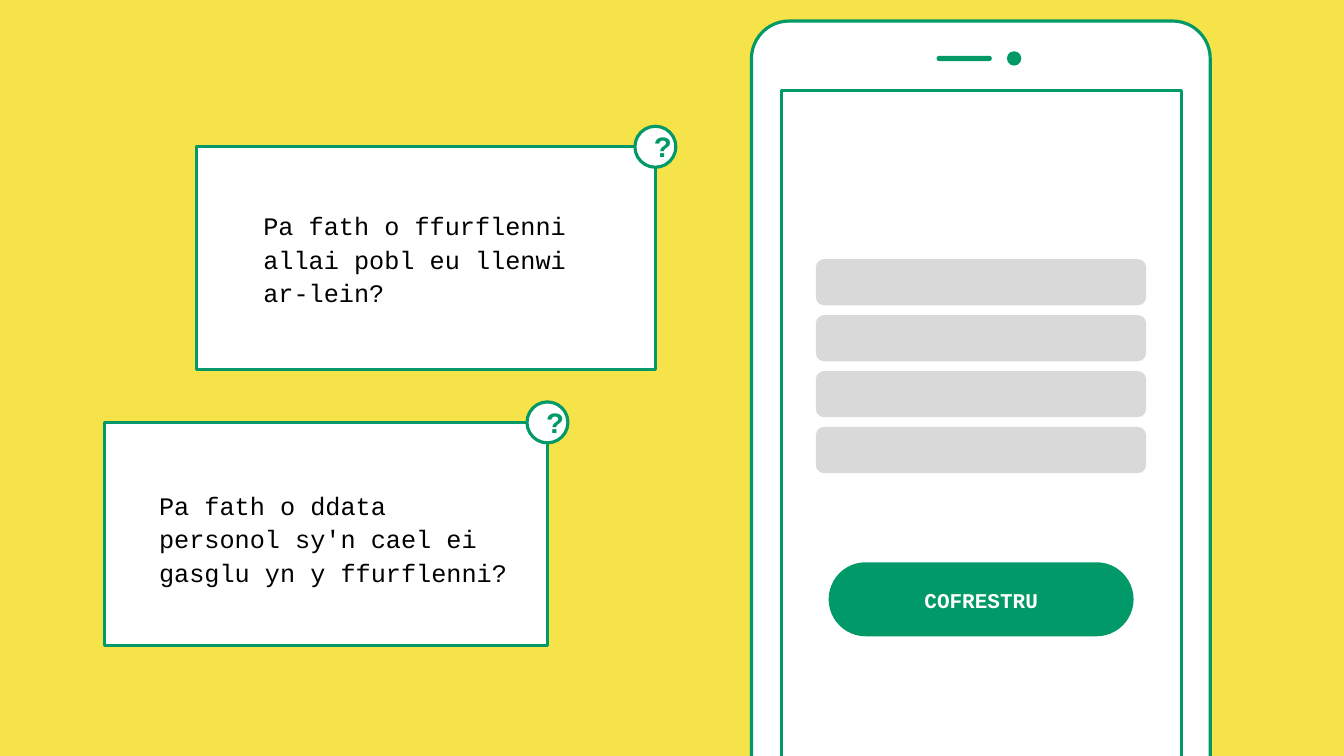
from pptx import Presentation
from pptx.dml.color import RGBColor
from pptx.enum.shapes import MSO_SHAPE
from pptx.enum.text import MSO_ANCHOR, PP_ALIGN
from pptx.util import Pt

COLORS = {
    "yellow": "F6E249",
    "green": "019967",
    "white": "FFFFFF",
    "gray": "D9D9D9",
    "black": "000000",
}
FONT = "Courier New"

prs = Presentation()
prs.slide_width, prs.slide_height = Pt(1280), Pt(720)
slide = prs.slides.add_slide(prs.slide_layouts[6])
slide.background.fill.solid()
slide.background.fill.fore_color.rgb = RGBColor.from_string(COLORS["yellow"])


def add_panel(kind, left, top, width, height, fill, outlined=False, rounding=None):
    """Add a filled shape, with a green outline if asked for."""
    panel = slide.shapes.add_shape(kind, Pt(left), Pt(top), Pt(width), Pt(height))
    panel.shadow.inherit = False
    panel.fill.solid()
    panel.fill.fore_color.rgb = RGBColor.from_string(COLORS[fill])
    if outlined:
        panel.line.color.rgb = RGBColor.from_string(COLORS["green"])
        panel.line.width = Pt(3)
    else:
        panel.line.fill.background()
    if rounding is not None:
        panel.adjustments[0] = rounding


def add_label(text, left, top, width, height, size, color, bold=False, inset=(9.6, 4.8)):
    """Add a wrapped text box and return its frame."""
    box = slide.shapes.add_textbox(Pt(left), Pt(top), Pt(width), Pt(height))
    frame = box.text_frame
    frame.word_wrap = True
    frame.margin_left = frame.margin_right = Pt(inset[0])
    frame.margin_top = frame.margin_bottom = Pt(inset[1])
    frame.text = text
    font = frame.paragraphs[0].runs[0].font
    font.name, font.size, font.bold = FONT, Pt(size), bold
    font.color.rgb = RGBColor.from_string(COLORS[color])
    return frame


# Phone: body, screen, speaker and camera
add_panel(MSO_SHAPE.ROUNDED_RECTANGLE, 715.7, 20, 437, 835, "white", True, 0.082)
add_panel(MSO_SHAPE.ROUNDED_RECTANGLE, 744, 86.2, 381, 692, "white", True, 0)
add_panel(MSO_SHAPE.ROUNDED_RECTANGLE, 892, 53.2, 52.6, 5, "green", rounding=0.5)
add_panel(MSO_SHAPE.OVAL, 959, 48.8, 13.7, 13.7, "green")

# Form fields and sign-up button
for row in range(4):
    add_panel(MSO_SHAPE.ROUNDED_RECTANGLE, 777, 246.8 + row * 53.3, 314.6, 44,
              "gray", rounding=0.177)
add_panel(MSO_SHAPE.ROUNDED_RECTANGLE, 789.2, 535.5, 290.4, 70.5, "green", rounding=0.5)
signup = add_label("COFRESTRU", 744, 536.4, 381, 70.6, 20, "white", bold=True)
signup.vertical_anchor = MSO_ANCHOR.MIDDLE
signup.paragraphs[0].alignment = PP_ALIGN.CENTER
signup.paragraphs[0].space_after = Pt(15)

# Question cards, each with a badge centred on its top right corner
CARD_HEIGHT, BADGE = 212.4, 39
questions = [
    ("Pa fath o ddata personol sy'n cael ei gasglu yn y ffurflenni?",
     (99.4, 402.3, 422), (141.9, 459.3, 360)),
    ("Pa fath o ffurflenni allai pobl eu llenwi ar-lein?",
     (187.2, 139.8, 437), (241.2, 193, 334.8)),
]
for question, (left, top, width), (text_left, text_top, text_width) in questions:
    add_panel(MSO_SHAPE.RECTANGLE, left, top, width, CARD_HEIGHT, "white", True)
    body = add_label(question, text_left, text_top, text_width, 106, 24, "black")
    body.paragraphs[0].line_spacing = 1.1

    badge_left, badge_top = left + width - BADGE / 2, top - BADGE / 2
    add_panel(MSO_SHAPE.OVAL, badge_left, badge_top, BADGE, BADGE, "white", True)
    mark = add_label("?", badge_left + 11.3, badge_top + 3.4, 16.6, 35.3, 28, "green",
                     bold=True, inset=(7.2, 3.6))
    mark.vertical_anchor = MSO_ANCHOR.MIDDLE
    mark_line = mark.paragraphs[0]
    mark_line.alignment = PP_ALIGN.CENTER
    mark_line.line_spacing = 0.9
    mark_line.space_before = Pt(12)

prs.save("out.pptx")
